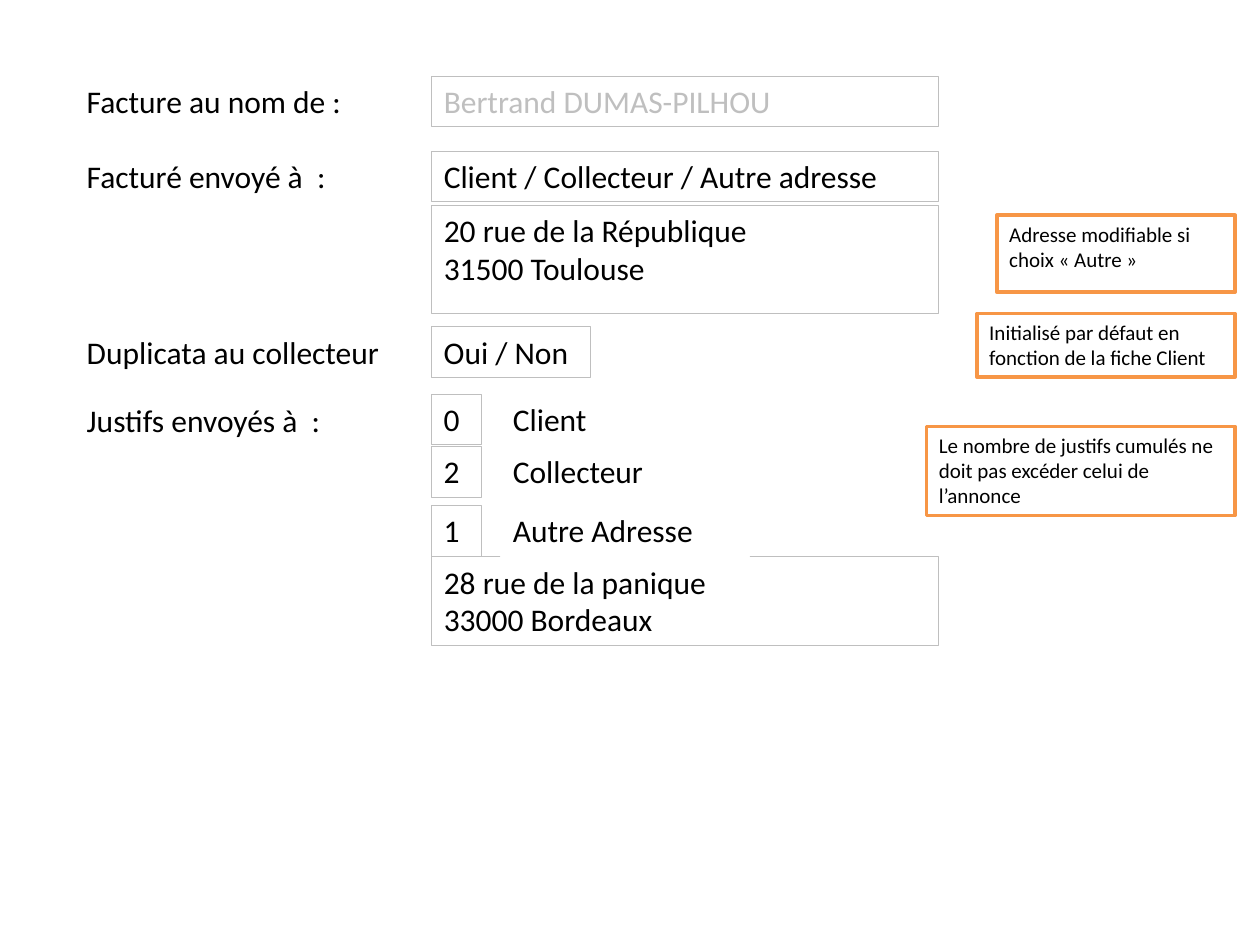
from pptx import Presentation
from pptx.dml.color import RGBColor
from pptx.enum.text import MSO_ANCHOR, MSO_AUTO_SIZE
from pptx.util import Pt

TOP = MSO_ANCHOR.TOP
FIXED = MSO_AUTO_SIZE.NONE

COLORS = {"ink": "000000", "gray": "BFBFBF", "white": "FFFFFF", "orange": "F79646"}

STYLES = {
    "label": {"size": 18, "ink": "ink", "fill": None, "line": None, "width": 0},
    "field": {"size": 18, "ink": "ink", "fill": None, "line": "gray", "width": 0.25},
    "locked": {"size": 18, "ink": "gray", "fill": None, "line": "gray", "width": 0.25},
    "name": {"size": 18, "ink": "ink", "fill": None, "line": "white", "width": 0.25},
    "note": {"size": 12, "ink": "ink", "fill": "white", "line": "orange", "width": 2},
}

LEFT, MID, NEXT, EDGE = 42.5, 246.5, 286, 705.8
ROW, WIDE, COUNT = 29, 289.5, 28.3

LABELS = [
    ("Facture au nom de :", 43.3, 164),
    ("Facturé envoyé à  :", 86, 158.5),
    ("Duplicata au collecteur", 186.5, 197),
    ("Justifs envoyés à  :", 225.6, 158.5),
]
FIELDS = [
    ("Bertrand DUMAS-PILHOU", "locked", 43.3, WIDE, ROW),
    ("Client / Collecteur / Autre adresse", "field", 86.3, WIDE, ROW),
    ("20 rue de la République\n31500 Toulouse", "field", 117.3, WIDE, 61.8),
    ("Oui / Non", "field", 186.5, 90.7, ROW),
    ("28 rue de la panique\n33000 Bordeaux", "field", 318, WIDE, 51),
]
COPIES = [
    ("0", "Client", 225, 57),
    ("2", "Collecteur", 255, 125.5),
    ("1", "Autre Adresse", 288.6, 142),
]
NOTES = [
    ("Adresse modifiable si choix « Autre »", 123, 136.2, 44),
    ("Initialisé par défaut en fonction de la fiche Client", 179.2, 147.6, 36.3),
    ("Le nombre de justifs cumulés ne doit pas excéder celui de l’annonce",
     243.6, 176.4, 51),
]


def color(name):
    return RGBColor.from_string(COLORS[name])


def put(slide, text, kind, x, y, w, h):
    style = STYLES[kind]
    box = slide.shapes.add_textbox(Pt(x), Pt(y), Pt(w), Pt(h))
    frame = box.text_frame
    for key, value in {"word_wrap": True, "auto_size": FIXED,
                       "vertical_anchor": TOP}.items():
        setattr(frame, key, value)
    if style["fill"]:
        box.fill.solid()
        box.fill.fore_color.rgb = color(style["fill"])
    if style["line"]:
        box.line.color.rgb = color(style["line"])
        box.line.width = Pt(style["width"])
    para = frame.paragraphs[0]
    para.text = text
    for run in para.runs:
        for key, value in {"name": "Calibri", "size": Pt(style["size"])}.items():
            setattr(run.font, key, value)
        run.font.color.rgb = color(style["ink"])


def main():
    deck = Presentation()
    deck.slide_width, deck.slide_height = Pt(720), Pt(540)
    slide = deck.slides.add_slide(deck.slide_layouts[6])
    for text, y, w in LABELS:
        put(slide, text, "label", LEFT, y, w, ROW)
    for text, kind, y, w, h in FIELDS:
        put(slide, text, kind, MID, y, w, h)
    for count, name, y, w in COPIES:
        put(slide, name, "name", NEXT, y, w, ROW)
        put(slide, count, "field", MID, y, COUNT, ROW)
    for text, y, w, h in NOTES:
        put(slide, text, "note", EDGE - w, y, w, h)
    deck.save("out.pptx")


if __name__ == "__main__":
    main()
